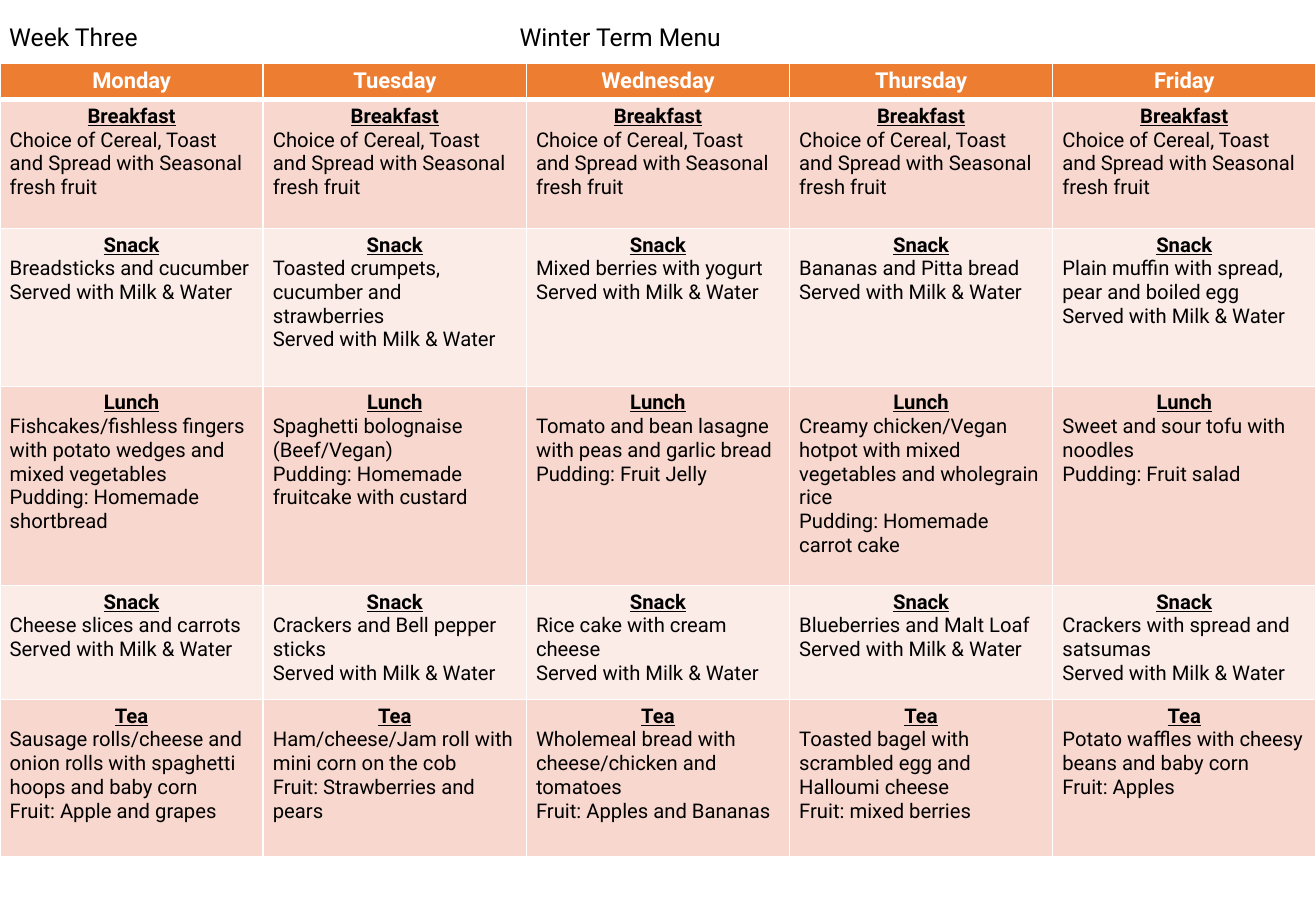
from typing import NamedTuple

from lxml import etree
from pptx import Presentation
from pptx.dml.color import RGBColor
from pptx.enum.text import MSO_AUTO_SIZE, PP_ALIGN
from pptx.oxml.ns import qn
from pptx.util import Inches, Pt

CENTER, LEFT = PP_ALIGN.CENTER, PP_ALIGN.LEFT
GROW = MSO_AUTO_SIZE.SHAPE_TO_FIT_TEXT

FONT = "Roboto"
WHITE, BLACK = "FFFFFF", "000000"
ORANGE, PEACH, CREAM = "ED7D31", "F8D7CE", "FCECE8"

WIDTH, HEIGHT = 10.83, 7.5
TOP, HEAD = 0.52, 0.3


class Meal(NamedTuple):
    name: str
    height: float
    fill: str
    days: list[list[str]]


class Title(NamedTuple):
    text: str
    left: float


DRINK = "Served with Milk & Water"
DAYS = ["Monday", "Tuesday", "Wednesday", "Thursday", "Friday"]
TITLES = [Title("Winter Term Menu", 3.87), Title("Week Three", -0.63)]

MEALS = [
    Meal("Breakfast", 1.06, PEACH, [
        ["Choice of Cereal, Toast and Spread with Seasonal fresh fruit"],
    ] * len(DAYS)),
    Meal("Snack", 1.3, CREAM, [
        ["Breadsticks and cucumber", DRINK],
        ["Toasted crumpets, cucumber and strawberries", DRINK],
        ["Mixed berries with yogurt", DRINK],
        ["Bananas and Pitta bread", DRINK],
        ["Plain muffin with spread, pear and boiled egg", DRINK],
    ]),
    Meal("Lunch", 1.64, PEACH, [
        ["Fishcakes/fishless fingers with potato wedges and mixed vegetables",
         "Pudding: Homemade shortbread"],
        ["Spaghetti bolognaise (Beef/Vegan)",
         "Pudding: Homemade fruitcake with custard"],
        ["Tomato and bean lasagne with peas and garlic bread",
         "Pudding: Fruit Jelly"],
        ["Creamy chicken/Vegan hotpot with mixed vegetables and wholegrain rice",
         "Pudding: Homemade carrot cake"],
        ["Sweet and sour tofu with noodles", "Pudding: Fruit salad"],
    ]),
    Meal("Snack", 0.94, CREAM, [
        ["Cheese slices and carrots", DRINK],
        ["Crackers and Bell pepper sticks", DRINK],
        ["Rice cake with cream cheese", DRINK],
        ["Blueberries and Malt Loaf", DRINK],
        ["Crackers with spread and satsumas", DRINK],
    ]),
    Meal("Tea", 1.29, PEACH, [
        ["Sausage rolls/cheese and onion rolls with spaghetti hoops and baby corn",
         "Fruit: Apple and grapes"],
        ["Ham/cheese/Jam roll with mini corn on the cob",
         "Fruit: Strawberries and pears"],
        ["Wholemeal bread with cheese/chicken and tomatoes",
         "Fruit: Apples and Bananas"],
        ["Toasted bagel with scrambled egg and Halloumi cheese",
         "Fruit: mixed berries"],
        ["Potato waffles with cheesy beans and baby corn", "Fruit: Apples"],
    ]),
]


def rgb(code: str) -> RGBColor:
    return RGBColor.from_string(code)


def write(para, text: str, *, size: float = 12, color: str = BLACK,
          bold: bool = False, line: bool = False, align=LEFT) -> None:
    para.alignment = align
    run = para.add_run()
    run.text = text
    font = run.font
    font.name, font.size = FONT, Pt(size)
    font.bold, font.underline = bold, line
    font.color.rgb = rgb(color)


def paint(cell, fill: str, above: float = 1, below: float = 1) -> None:
    """Give a cell its margins, white borders and fill."""
    cell.margin_left = cell.margin_right = Inches(0.08)
    cell.margin_top = cell.margin_bottom = Inches(0.04)
    props = cell._tc.get_or_add_tcPr()
    for side, width in zip("LRTB", (1, 1, above, below)):
        edge = etree.SubElement(props, qn(f"a:ln{side}"), w=str(Pt(width)))
        solid = etree.SubElement(edge, qn("a:solidFill"))
        etree.SubElement(solid, qn("a:srgbClr"), val=WHITE)
    cell.fill.solid()
    cell.fill.fore_color.rgb = rgb(fill)


def add_menu(slide) -> None:
    heights = [HEAD] + [meal.height for meal in MEALS]
    table = slide.shapes.add_table(
        len(heights), len(DAYS), Inches(0), Inches(TOP),
        Inches(WIDTH), Inches(sum(heights))).table
    for row, height in zip(table.rows, heights):
        row.height = Inches(height)

    for col, day in enumerate(DAYS):
        cell = table.cell(0, col)
        paint(cell, ORANGE, below=3)
        write(cell.text_frame.paragraphs[0], day, size=13, color=WHITE,
              bold=True, align=CENTER)

    for row, meal in enumerate(MEALS, 1):
        for col, dishes in enumerate(meal.days):
            cell = table.cell(row, col)
            paint(cell, meal.fill, above=3 if row == 1 else 1)
            frame = cell.text_frame
            write(frame.paragraphs[0], meal.name, bold=True, line=True,
                  align=CENTER)
            for dish in dishes:
                write(frame.add_paragraph(), dish)


def add_title(slide, title: Title) -> None:
    box = slide.shapes.add_textbox(
        Inches(title.left), Inches(0.13), Inches(2.47), Inches(0.35))
    frame = box.text_frame
    frame.word_wrap = True
    frame.auto_size = GROW
    write(frame.paragraphs[0], title.text, size=14.6, align=CENTER)


def main() -> None:
    deck = Presentation()
    deck.slide_width, deck.slide_height = Inches(WIDTH), Inches(HEIGHT)
    slide = deck.slides.add_slide(deck.slide_layouts[6])
    add_menu(slide)
    for title in TITLES:
        add_title(slide, title)
    deck.save("out.pptx")


if __name__ == "__main__":
    main()
